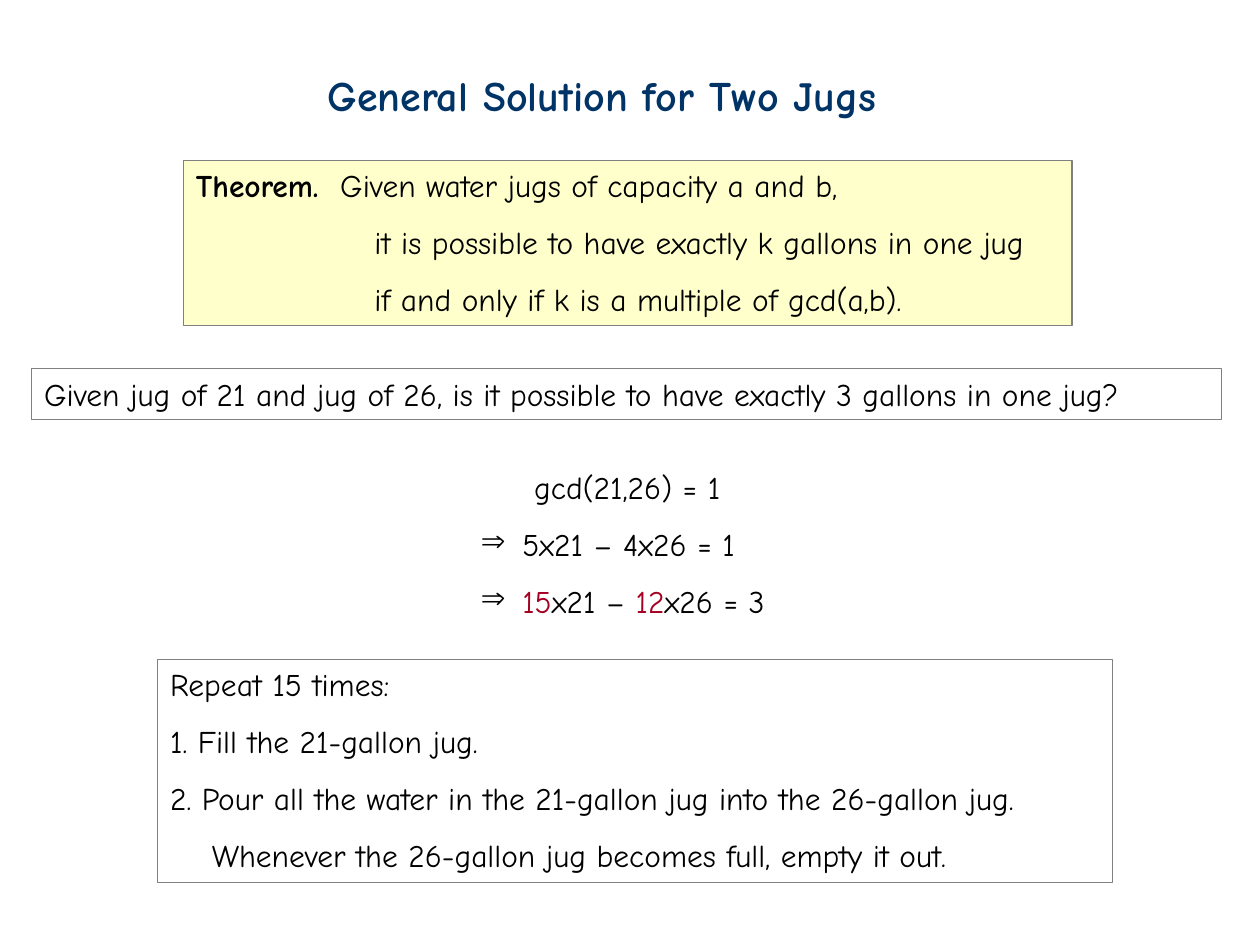
from pptx import Presentation
from pptx.dml.color import RGBColor
from pptx.enum import shapes, text
from pptx.oxml import parse_xml
from pptx.oxml.ns import nsdecls
from pptx.util import Cm, Pt

FONT = "Comic Neue"
BLACK = RGBColor(0x00, 0x00, 0x00)
NAVY = RGBColor(0x00, 0x33, 0x66)
RED = RGBColor(0xA5, 0x00, 0x21)
GREY = RGBColor(0x80, 0x80, 0x80)
CREAM = RGBColor(0xFF, 0xFF, 0xCC)

# Content: a line is (left margin, first-line indent, bullet, runs),
# and a run is (text, colour, bold)
TITLE = "General Solution for Two Jugs"


def line(words, left=0, first=0, mark=None):
    runs = [(words, BLACK, False)] if isinstance(words, str) else words
    return left, first, mark, runs


THEOREM = [
    line([("Theorem.", BLACK, True),
          ("\tGiven water jugs of capacity a and b,", BLACK, False)], 2.91, -2.91),
    line("it is possible to have exactly k gallons in one jug", 3.6),
    line("if and only if k is a multiple of gcd(a,b).", 3.6),
]
QUESTION = [
    line("Given jug of 21 and jug of 26, is it possible to have "
         "exactly 3 gallons in one jug?"),
]
PROOF = [
    line("gcd(21,26) = 1", 1.08),
    line("5x21 – 4x26 = 1", 0.84, -0.84, "⇒"),
    line([("15", RED, False), ("x21 – ", BLACK, False),
          ("12", RED, False), ("x26 = 3", BLACK, False)], 0.84, -0.84, "⇒"),
]
STEPS = [
    line("Repeat 15 times:"),
    line("1. Fill the 21-gallon jug."),
    line("2. Pour all the water in the 21-gallon jug into the 26-gallon jug."),
    line("Whenever the 26-gallon jug becomes full, empty it out.", 0.84),
]

# Boxes: place in cm (left, top, width, height), fill, border, lines
BOXES = [
    ((3.7, 3.23, 17.91, 3.33), CREAM, True, THEOREM),
    ((0.64, 7.43, 23.99, 1.03), None, True, QUESTION),
    ((9.44, 9.32, 6.63, 3.3), None, False, PROOF),
    ((3.18, 13.29, 19.25, 4.5), None, True, STEPS),
]


def style(run, size, color, bold):
    font = run.font
    font.name, font.size, font.bold = FONT, Pt(size), bold
    font.color.rgb = color


def setup(frame):
    frame.word_wrap = True
    frame.auto_size = text.MSO_AUTO_SIZE.NONE
    frame.vertical_anchor = text.MSO_ANCHOR.TOP


def add_mark(props, mark):
    space = nsdecls("a")
    props.append(parse_xml(
        f'<a:buClr {space}><a:srgbClr val="{BLACK}"/></a:buClr>'))
    props.append(parse_xml(f'<a:buChar {space} char="{mark}"/>'))


def write(frame, lines):
    setup(frame)
    for i, (left, first, mark, runs) in enumerate(lines):
        para = frame.paragraphs[0] if i == 0 else frame.add_paragraph()
        para.alignment = text.PP_ALIGN.LEFT
        if i:
            para.line_spacing = 1.5
        props = para._p.get_or_add_pPr()
        props.set("marL", str(Cm(left)))
        props.set("indent", str(Cm(first)))
        if mark:
            add_mark(props, mark)
        for words, color, bold in runs:
            run = para.add_run()
            run.text = words
            style(run, 18, color, bold)


prs = Presentation()
prs.slide_width, prs.slide_height = Cm(25.4), Cm(19.05)
slide = prs.slides.add_slide(prs.slide_layouts[5])

# Title
title = slide.shapes.title
title.left, title.top, title.width, title.height = map(Cm, (6.35, 1.27, 12.93, 1.27))
title.text_frame.text = TITLE
setup(title.text_frame)
head = title.text_frame.paragraphs[0]
head.alignment = text.PP_ALIGN.LEFT
style(head.runs[0], 24, NAVY, True)

# Theorem, question, proof and steps
for place, fill, border, lines in BOXES:
    spot = map(Cm, place)
    if border:
        box = slide.shapes.add_shape(shapes.MSO_SHAPE.RECTANGLE, *spot)
        box.shadow.inherit = False
        box.line.color.rgb = GREY
        box.line.width = Pt(0.75)
        if fill:
            box.fill.solid()
            box.fill.fore_color.rgb = fill
        else:
            box.fill.background()
    else:
        box = slide.shapes.add_textbox(*spot)
    write(box.text_frame, lines)

prs.save("out.pptx")
